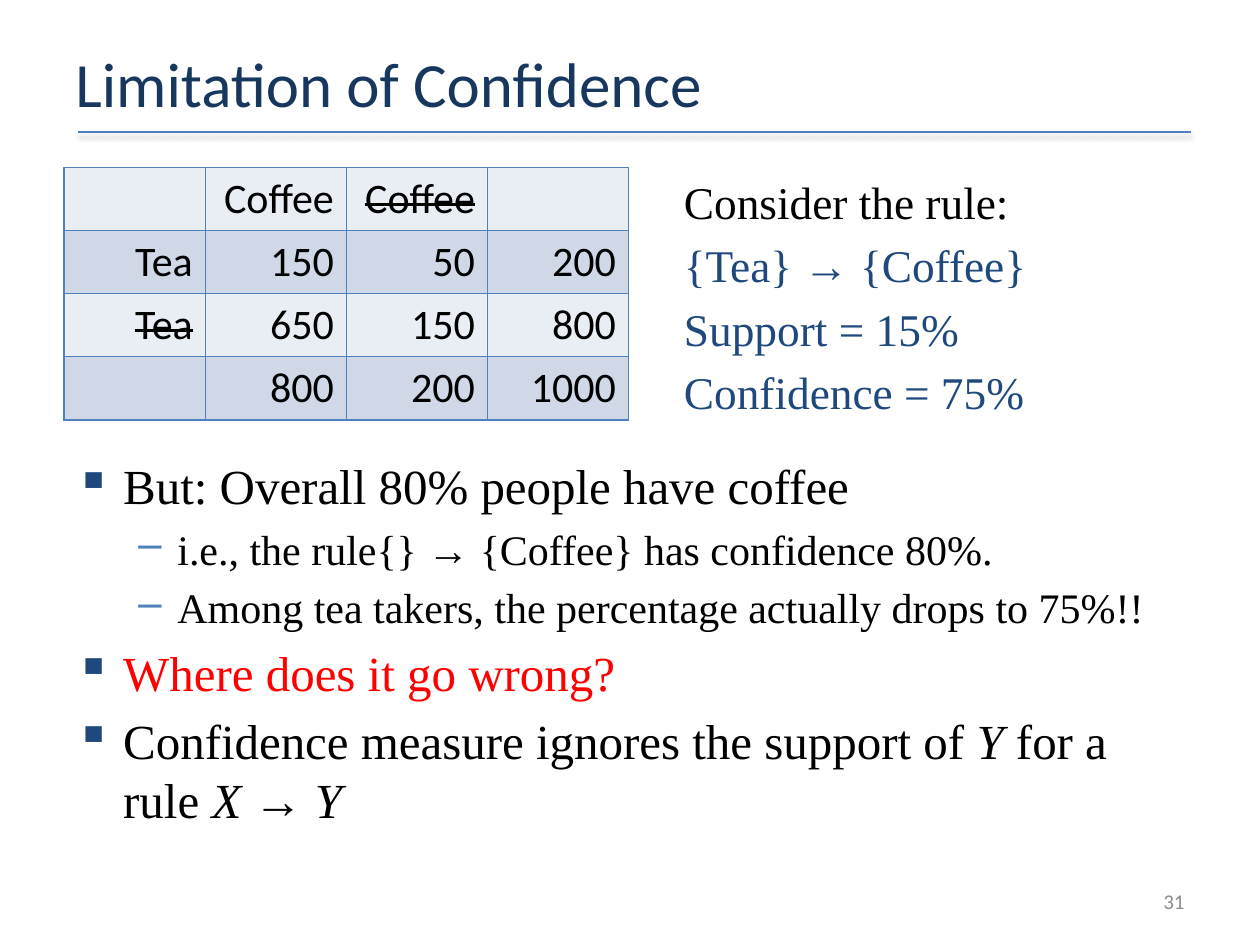
import pptx
import pptx.util
import pptx.dml.color
import pptx.enum.text
import pptx.enum.shapes
import pptx.oxml
import pptx.oxml.ns

Inches, Pt = pptx.util.Inches, pptx.util.Pt
ANCHOR, ALIGN = pptx.enum.text.MSO_ANCHOR, pptx.enum.text.PP_ALIGN

THEME = {
    "sans": "Calibri", "serif": "Times New Roman",
    "title": "17375E", "navy": "1F497D", "blue": "4F81BD",
    "text": "000000", "alert": "FF0000", "grey": "8C8C8C",
    "bands": ("E9EDF4", "D0D8E8"),
    "head": 36, "body": 28, "sub": 24, "rule": 25.9, "cell": 24, "page": 12,
}

# Content: "~" before a cell means struck out; "*" encloses italic text
TITLE = "Limitation of Confidence"
TABLE = [
    ("", "Coffee", "~Coffee", ""),
    ("Tea", "150", "50", "200"),
    ("~Tea", "650", "150", "800"),
    ("", "800", "200", "1000"),
]
RULE = [
    ("Consider the rule:", "text"),
    ("{Tea} → {Coffee}", "navy"),
    ("Support = 15%", "navy"),
    ("Confidence = 75%", "navy"),
]
POINTS = [  # level, text, colour
    (0, "But: Overall 80% people have coffee", "text"),
    (1, "i.e., the rule{} → {Coffee} has confidence 80%.", "text"),
    (1, "Among tea takers, the percentage actually drops to 75%!!", "text"),
    (0, "Where does it go wrong?", "alert"),
    (0, "Confidence measure ignores the support of *Y *for a rule *X → Y*", "text"),
]
LEVELS = [  # size, bullet, bullet colour, left margin, hanging indent
    ("body", "▪", "navy", 0.38, 0.38),
    ("sub", "–", "blue", 0.81, 0.31),
]
PAGE = "31"


def color(name):
    return pptx.dml.color.RGBColor.from_string(THEME.get(name, name))


def add_xml(parent, xml):
    """Append a drawing element written without its namespace."""
    tag, rest = xml[:xml.index(" ")], xml[xml.index(" "):]
    node = pptx.oxml.parse_xml(f"<{tag} {pptx.oxml.ns.nsdecls('a')}{rest}")
    parent.append(node)


def style(para, face, size, hue):
    font = para.font
    font.name, font.size = THEME[face], Pt(THEME[size])
    font.color.rgb = color(hue)


def add_box(slide, left, top, width, height, anchor=ANCHOR.TOP):
    box = slide.shapes.add_textbox(*map(Inches, (left, top, width, height)))
    frame = box.text_frame
    frame.word_wrap, frame.vertical_anchor = True, anchor
    return frame


def add_lines(frame, count):
    return [frame.paragraphs[0]] + [frame.add_paragraph() for _ in range(count - 1)]


def add_space(para):
    add_xml(para._p.get_or_add_pPr(),
            'a:spcBef ><a:spcPct val="20000"/></a:spcBef>')


def add_bullet(para, sign, hue, left, hang):
    props = para._p.get_or_add_pPr()
    props.set("marL", str(Inches(left)))
    props.set("indent", str(-Inches(hang)))
    add_xml(props, f'a:buClr ><a:srgbClr val="{THEME[hue]}"/></a:buClr>')
    add_xml(props, f'a:buChar char="{sign}"/>')


def add_border(cell):
    for side in ("lnL", "lnR", "lnT", "lnB"):
        add_xml(cell._tc.get_or_add_tcPr(),
                f'a:{side} w="{Pt(1)}"><a:solidFill><a:srgbClr val="{THEME["blue"]}"/>'
                f'</a:solidFill></a:{side}>')


def add_title(slide):
    frame = add_box(slide, 0.5, 0.3, 9, 0.71, ANCHOR.MIDDLE)
    frame.text = TITLE
    style(frame.paragraphs[0], "sans", "head", "title")
    # Underline with a soft shadow
    line = slide.shapes.add_connector(
        pptx.enum.shapes.MSO_CONNECTOR.STRAIGHT,
        *map(Inches, (0.62, 1.05, 9.45, 1.05)))
    line.line.color.rgb, line.line.width = color("blue"), Pt(1)
    add_xml(line._element.spPr,
            f'a:effectLst ><a:outerShdw blurRad="{Pt(3.1)}" dist="{Pt(1.6)}" '
            'dir="5400000" rotWithShape="0"><a:srgbClr val="000000">'
            '<a:alpha val="38000"/></a:srgbClr></a:outerShdw></a:effectLst>')


def add_counts(slide):
    grid = slide.shapes.add_table(
        len(TABLE), len(TABLE[0]), *map(Inches, (0.51, 1.33, 4.48, 2))).table
    for i, row in enumerate(TABLE):
        for j, text in enumerate(row):
            cell = grid.cell(i, j)
            add_border(cell)
            cell.fill.solid()
            cell.fill.fore_color.rgb = color(THEME["bands"][i % 2])
            para = cell.text_frame.paragraphs[0]
            para.alignment = ALIGN.RIGHT
            style(para, "sans", "cell", "text")
            if text:
                run = para.add_run()
                run.text = text.lstrip("~")
                if text.startswith("~"):
                    run.font._element.set("strike", "sngStrike")


def add_rule(slide):
    frame = add_box(slide, 5.33, 1.33, 4.17, 2)
    for para, (text, hue) in zip(add_lines(frame, len(RULE)), RULE):
        para.text = text
        add_space(para)
        style(para, "serif", "rule", hue)


def add_points(slide):
    frame = add_box(slide, 0.5, 3.57, 9, 3.13)
    for para, (level, text, hue) in zip(add_lines(frame, len(POINTS)), POINTS):
        size, *bullet = LEVELS[level]
        para.level = level
        add_space(para)
        add_bullet(para, *bullet)
        style(para, "serif", size, hue)
        for k, part in enumerate(text.split("*")):
            if part:
                run = para.add_run()
                run.text = part
                if k % 2:
                    run.font.italic = True


def add_page(slide):
    frame = add_box(slide, 7.17, 6.95, 2.33, 0.4, ANCHOR.MIDDLE)
    frame.text = PAGE
    para = frame.paragraphs[0]
    para.alignment = ALIGN.RIGHT
    style(para, "sans", "page", "grey")


def main():
    deck = pptx.Presentation()
    deck.slide_width, deck.slide_height = Inches(10), Inches(7.5)
    slide = deck.slides.add_slide(deck.slide_layouts[6])
    for part in (add_title, add_points, add_page, add_counts, add_rule):
        part(slide)
    deck.save("out.pptx")


if __name__ == "__main__":
    main()
